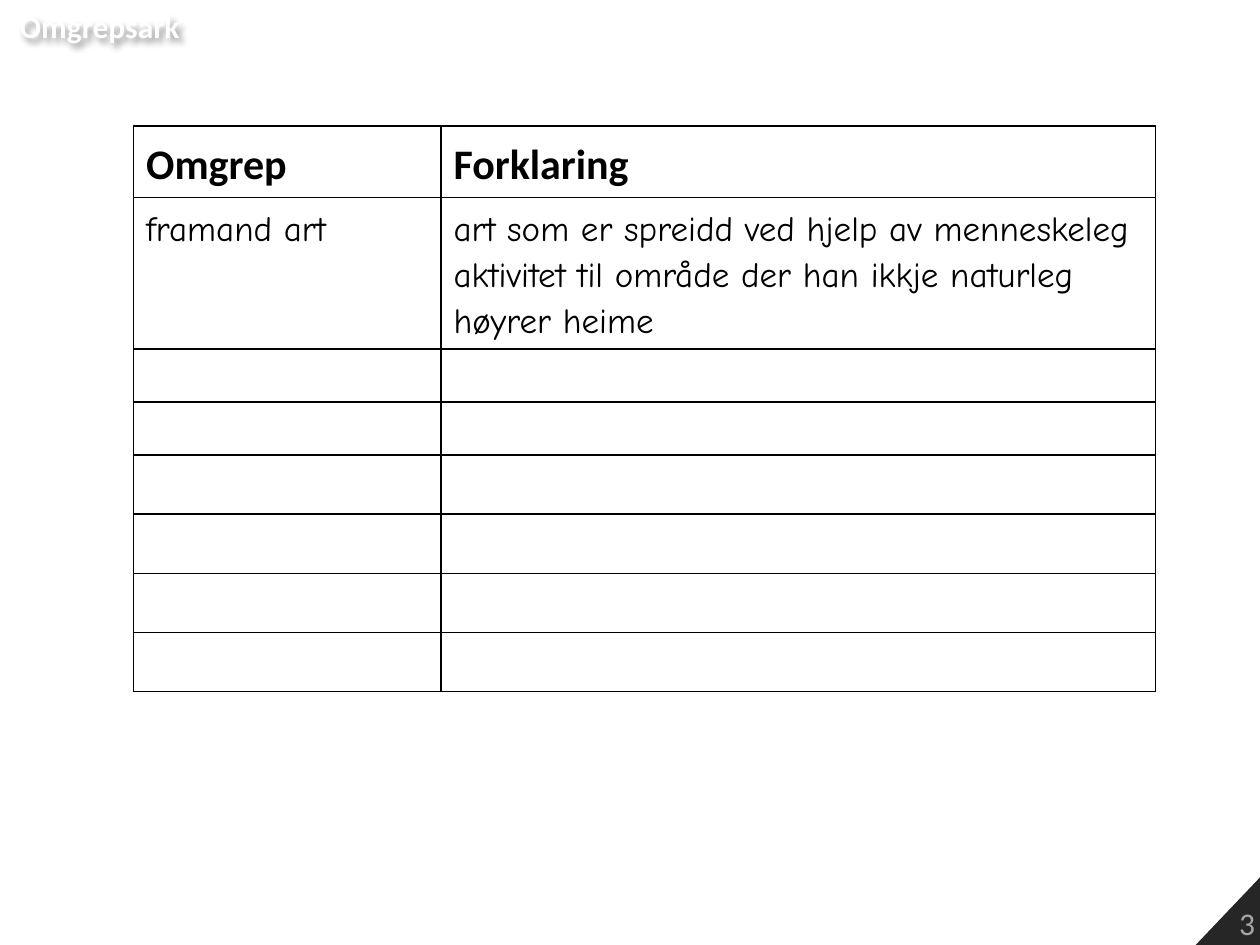
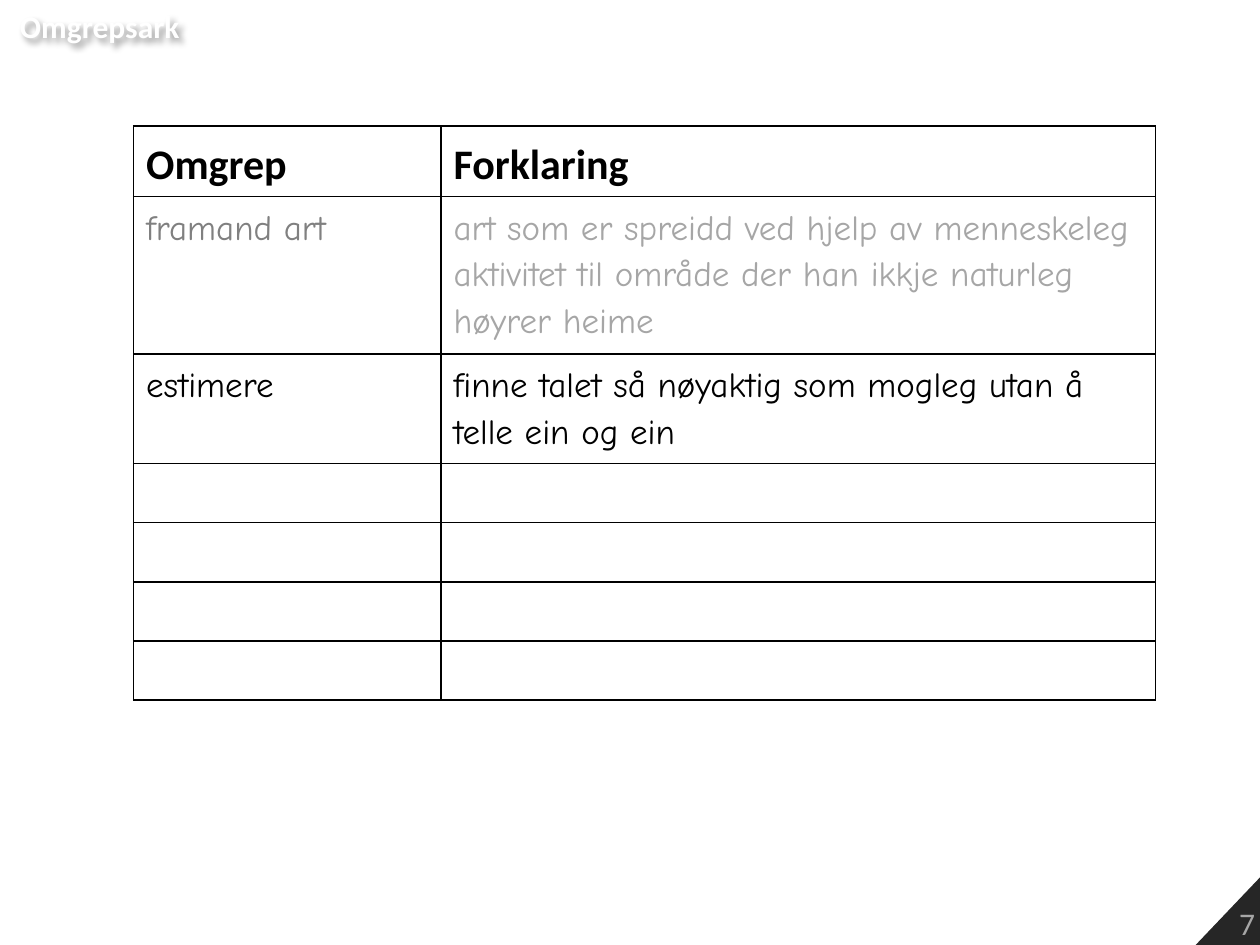
from lxml.etree import SubElement
from pptx import Presentation
from pptx.dml.color import RGBColor
from pptx.enum.text import MSO_ANCHOR, PP_ALIGN
from pptx.oxml import parse_xml
from pptx.oxml.ns import nsdecls, qn
from pptx.util import Inches, Pt

BLACK = RGBColor(0x00, 0x00, 0x00)
WHITE = RGBColor(0xFF, 0xFF, 0xFF)
CORNER = RGBColor(0x26, 0x26, 0x26)
GREY = RGBColor(0x80, 0x80, 0x80)
LIGHT_GREY = RGBColor(0xA6, 0xA6, 0xA6)

HEADING_FONT = "Calibri"
BODY_FONT = "Comic Neue"

TITLE_BOX = (0.06, 0.01, 1.48, 0.4)
TABLE_BOX = (1.06, 1.0, 8.11)
CORNER_BOX = (9.47, 6.9, 0.59, 0.62)
TERM_WIDTH = 2.44
HEADER_HEIGHT = 0.56
BORDER_SIDES = ("L", "R", "T", "B")

FOREIGN_SPECIES = (
    "framand art",
    "art som er spreidd ved hjelp av menneskeleg aktivitet til område "
    "der han ikkje naturleg høyrer heime",
)
ESTIMATE = ("estimere", "finne talet så nøyaktig som mogleg utan å telle ein og ein")
SHEETS = [
    {
        "number": 3,
        "entries": [(FOREIGN_SPECIES, (BLACK, BLACK))],
        "heights": [1.2] + [0.42] * 2 + [0.47] * 4,
    },
    {
        "number": 7,
        "entries": [(FOREIGN_SPECIES, (GREY, LIGHT_GREY)), (ESTIMATE, (BLACK, BLACK))],
        "heights": [1.2, 0.84] + [0.47] * 4,
    },
]


def set_text(text_frame, text, font_name, size, color, bold=False):
    """Write one paragraph with a single font and return it."""
    paragraph = text_frame.paragraphs[0]
    paragraph.text = text
    font = paragraph.font
    font.name, font.size, font.bold = font_name, Pt(size), bold
    font.color.rgb = color
    return paragraph


def add_title(slide, box):
    """Add the white sheet title with its soft shadow."""
    title = slide.shapes.add_textbox(*map(Inches, box))
    title.text_frame.word_wrap = False
    set_text(title.text_frame, "Omgrepsark", HEADING_FONT, 18, WHITE, True)
    title._element.spPr.append(parse_xml(
        f'<a:effectLst {nsdecls("a")}>'
        '<a:outerShdw blurRad="50800" dist="38100" dir="2700000" algn="tl" rotWithShape="0">'
        '<a:prstClr val="black"><a:alpha val="40000"/></a:prstClr>'
        '</a:outerShdw></a:effectLst>'
    ))


def add_page_corner(slide, box, number):
    """Add the dark corner triangle holding the page number."""
    left, top, width, height = map(Inches, box)
    builder = slide.shapes.build_freeform(left, top + height)
    builder.add_line_segments([(left + width, top), (left + width, top + height)])
    corner = builder.convert_to_shape()
    corner.shadow.inherit = False
    corner.fill.solid()
    corner.fill.fore_color.rgb = CORNER
    corner.line.fill.background()
    corner.text_frame.vertical_anchor = MSO_ANCHOR.BOTTOM
    paragraph = set_text(corner.text_frame, str(number), HEADING_FONT, 18, LIGHT_GREY)
    paragraph.alignment = PP_ALIGN.RIGHT


def style_cell(cell):
    """Give a cell no fill and thin black borders."""
    cell.fill.background()
    properties = cell._tc.get_or_add_tcPr()
    for position, side in enumerate(BORDER_SIDES):
        border = SubElement(properties, qn(f"a:ln{side}"), w=str(Pt(1)))
        fill = SubElement(border, qn("a:solidFill"))
        SubElement(fill, qn("a:srgbClr"), val=str(BLACK))
        properties.insert(position, border)


def add_concept_table(slide, box, entries, heights):
    """Add the table of terms and explanations."""
    left, top, width = box
    row_heights = [HEADER_HEIGHT] + heights
    frame = slide.shapes.add_table(
        len(row_heights), 2, Inches(left), Inches(top), Inches(width), Inches(sum(row_heights))
    )
    table = frame.table
    table.first_row = table.horz_banding = False
    for column, column_width in zip(table.columns, (TERM_WIDTH, width - TERM_WIDTH)):
        column.width = Inches(column_width)
    for row, height in zip(table.rows, row_heights):
        row.height = Inches(height)
    for cell in table.iter_cells():
        style_cell(cell)
    for column, heading in enumerate(("Omgrep", "Forklaring")):
        cell = table.cell(0, column)
        cell.vertical_anchor = MSO_ANCHOR.MIDDLE
        set_text(cell.text_frame, heading, HEADING_FONT, 24, BLACK, True).line_spacing = 1.15
    for row, (texts, colors) in enumerate(entries, start=1):
        for column, (text, color) in enumerate(zip(texts, colors)):
            text_frame = table.cell(row, column).text_frame
            set_text(text_frame, text, BODY_FONT, 20, color).line_spacing = 1.15


def add_concept_slide(presentation, number, entries, heights):
    """Add one concept sheet."""
    slide = presentation.slides.add_slide(presentation.slide_layouts[6])
    slide.background.fill.solid()
    slide.background.fill.fore_color.rgb = WHITE
    add_page_corner(slide, CORNER_BOX, number)
    add_concept_table(slide, TABLE_BOX, entries, heights)
    add_title(slide, TITLE_BOX)


def main():
    """Build and save the presentation."""
    presentation = Presentation()
    presentation.slide_width, presentation.slide_height = Inches(10), Inches(7.5)
    for sheet in SHEETS:
        add_concept_slide(presentation, **sheet)
    presentation.save("out.pptx")


if __name__ == "__main__":
    main()
